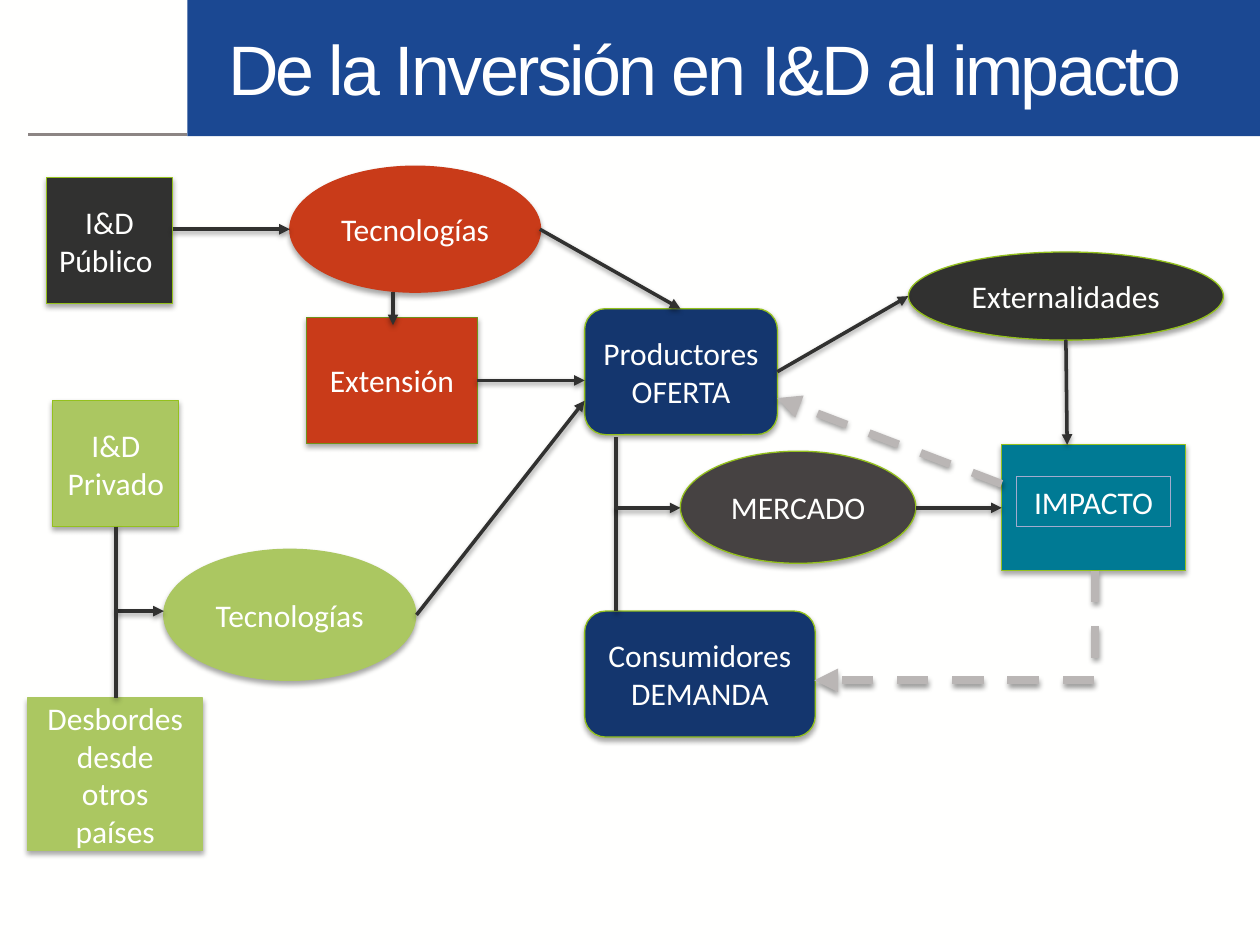
from lxml import etree
from pptx import Presentation
from pptx import util as u
from pptx.dml.color import RGBColor
from pptx.enum import dml, shapes, text
from pptx.oxml import parse_xml
from pptx.oxml.ns import nsdecls, qn

C = {
    "paper": "FFFFFE", "white": "FFFFFF", "band": "1B4892", "rule": "8C8584",
    "dark": "313130", "brown": "464242", "red": "C93B19", "olive": "709119",
    "lime": "ABC761", "edge": "94C11D", "navy": "14366E", "teal": "007A94",
    "frame": "A3ABCE", "gray": "BAB6B5",
}
TITLE = "De la Inversión en I&D al impacto"
RECT, OVAL, ROUND = (shapes.MSO_SHAPE.RECTANGLE, shapes.MSO_SHAPE.OVAL,
                     shapes.MSO_SHAPE.ROUNDED_RECTANGLE)

# Shape, left, top, width, height, fill, outline, paragraphs
NODES = [
    (RECT, 572.4, 254.2, 105.1, 72, "teal", "edge", []),
    (RECT, 26.6, 101.5, 72, 72, "dark", "edge", ["I&D Público "]),
    (RECT, 30.2, 229, 72, 72, "lime", "edge", ["I&D Privado"]),
    (RECT, 15.8, 398.9, 100.1, 87.1, "lime", "lime", ["Desbordes desde otros países"]),
    (RECT, 175, 181.4, 97.9, 72, "red", "olive", ["Extensión"]),
    (OVAL, 165.6, 95, 143.3, 72, "red", "red", ["Tecnologías"]),
    (OVAL, 93.6, 313.9, 144, 74.9, "lime", "lime", ["Tecnologías"]),
    (ROUND, 334.1, 176.4, 110.2, 72, "navy", "edge", ["Productores", "OFERTA"]),
    (ROUND, 334.1, 349.2, 131.8, 72, "navy", "edge", ["Consumidores", "DEMANDA"]),
    (OVAL, 388.8, 257.8, 134.6, 64.1, "brown", "edge", ["MERCADO"]),
    (OVAL, 519.1, 144, 180, 50.4, "dark", "edge", ["Externalidades"]),
]
IMPACT_LABEL = ("IMPACTO", 581, 272.2, 87.8, 28.8)

# From x, y, to x, y
ARROWS = [
    (308.5, 131, 388.8, 176.4), (98.6, 131, 165.6, 131),
    (224.6, 167, 224.6, 185.8), (272.5, 217.4, 334.1, 217.4),
    (66.2, 349.2, 93.6, 349.2), (238, 351.4, 334.1, 229),
    (523.4, 290.2, 572.4, 290.2), (444.2, 212.4, 519.1, 169.2),
    (609.1, 194.4, 609.8, 254.2),
]
STEMS = [(352.1, 290.2, 352.1, 349.2), (66.2, 301, 66.2, 398.9)]
MARKET_ELBOW = (352.1, 249.8, 388.8, 290.2)
FEEDBACK_ELBOW = (625.7, 326.2, 465.4, 388.8)
FEEDBACK_ARROW = (572.4, 276.5, 444.2, 227.5)


def rgb(name):
    return RGBColor.from_string(C[name])


def add_shadow(sp, alpha, dist):
    sp._element.spPr.append(parse_xml(
        f'<a:effectLst {nsdecls("a")}><a:outerShdw blurRad="{u.Pt(3.1)}" '
        f'dist="{u.Pt(dist)}" dir="5400000" rotWithShape="0"><a:srgbClr val="000000">'
        f'<a:alpha val="{alpha * 1000}"/></a:srgbClr></a:outerShdw></a:effectLst>'))


def write(tf, paragraphs, size=18, font="Calibri", color="paper",
          align=text.PP_ALIGN.CENTER, anchor=text.MSO_ANCHOR.MIDDLE):
    tf.word_wrap = True
    tf.vertical_anchor = anchor
    for i, words in enumerate(paragraphs):
        p = tf.paragraphs[0] if i == 0 else tf.add_paragraph()
        p.alignment = align
        r = p.add_run()
        r.text = words
        r.font.size, r.font.name = u.Pt(size), font
        r.font.color.rgb = rgb(color)


def add_line(ends, color="dark", width=2, arrow=True, dash=False, shadow=True,
             kind=shapes.MSO_CONNECTOR.STRAIGHT):
    cx = s.shapes.add_connector(kind, *map(u.Pt, ends))
    cx.line.color.rgb, cx.line.width = rgb(color), u.Pt(width)
    if dash:
        cx.line.dash_style = dml.MSO_LINE.DASH
    if arrow:
        etree.SubElement(cx.line._get_or_add_ln(), qn("a:tailEnd"), type="triangle")
    if shadow:
        add_shadow(cx, 38, 1.6)
    else:
        etree.SubElement(cx._element.spPr, qn("a:effectLst"))
    return cx


def add_elbow(ends, **style):
    """Go down first, then sideways: a two-leg connector turned a quarter."""
    x1, y1, x2, y2 = ends
    mx, my = (x1 + x2) / 2, (y1 + y2) / 2
    half_w, half_h = (y2 - y1) / 2, (x1 - x2) / 2
    cx = add_line((mx - half_w, my - half_h, mx + half_w, my + half_h),
                  kind=shapes.MSO_CONNECTOR.ELBOW, **style)
    sp_pr = cx._element.spPr
    sp_pr.find(qn("a:prstGeom")).set("prst", "bentConnector2")
    sp_pr.find(qn("a:xfrm")).set("rot", "5400000")


prs = Presentation()
prs.slide_width, prs.slide_height = u.Pt(720), u.Pt(540)
s = prs.slides.add_slide(prs.slide_layouts[5])
s.background.fill.solid()
s.background.fill.fore_color.rgb = rgb("paper")

# Header band, rule and title
band = s.shapes.add_shape(RECT, *map(u.Pt, (107, 0, 613, 77.8)))
band.shadow.inherit = False
band.fill.solid()
band.fill.fore_color.rgb = rgb("band")
band.line.fill.background()
add_line((107, 77, 15.8, 77), "rule", 1.5, arrow=False, shadow=False)

title = s.shapes.title
title.left, title.top, title.width, title.height = map(u.Pt, (123.1, 0, 576.7, 77))
write(title.text_frame, [TITLE], 40, "Arial", "white", text.PP_ALIGN.LEFT)
title.text_frame.paragraphs[0].runs[0].font._element.set("spc", "-150")
s.shapes._spTree.append(title._element)  # bring the title in front of the band

# Diagram nodes
for shape, x, y, w, h, fill, edge, words in NODES:
    sp = s.shapes.add_shape(shape, *map(u.Pt, (x, y, w, h)))
    sp.fill.solid()
    sp.fill.fore_color.rgb = rgb(fill)
    sp.line.color.rgb, sp.line.width = rgb(edge), u.Pt(0.75)
    add_shadow(sp, 35, 1.8)
    write(sp.text_frame, words)

# Framed label on the impact node
label, *box = IMPACT_LABEL
tb = s.shapes.add_textbox(*map(u.Pt, box))
tb.line.color.rgb, tb.line.width = rgb("frame"), u.Pt(0.75)
write(tb.text_frame, [label], anchor=text.MSO_ANCHOR.TOP)

# Flow lines, then dashed feedback
for ends in ARROWS:
    add_line(ends)
for ends in STEMS:
    add_line(ends, arrow=False)
add_elbow(MARKET_ELBOW)
feedback = dict(color="gray", width=4.5, dash=True)
add_elbow(FEEDBACK_ELBOW, **feedback)
add_line(FEEDBACK_ARROW, **feedback)

prs.save("out.pptx")
